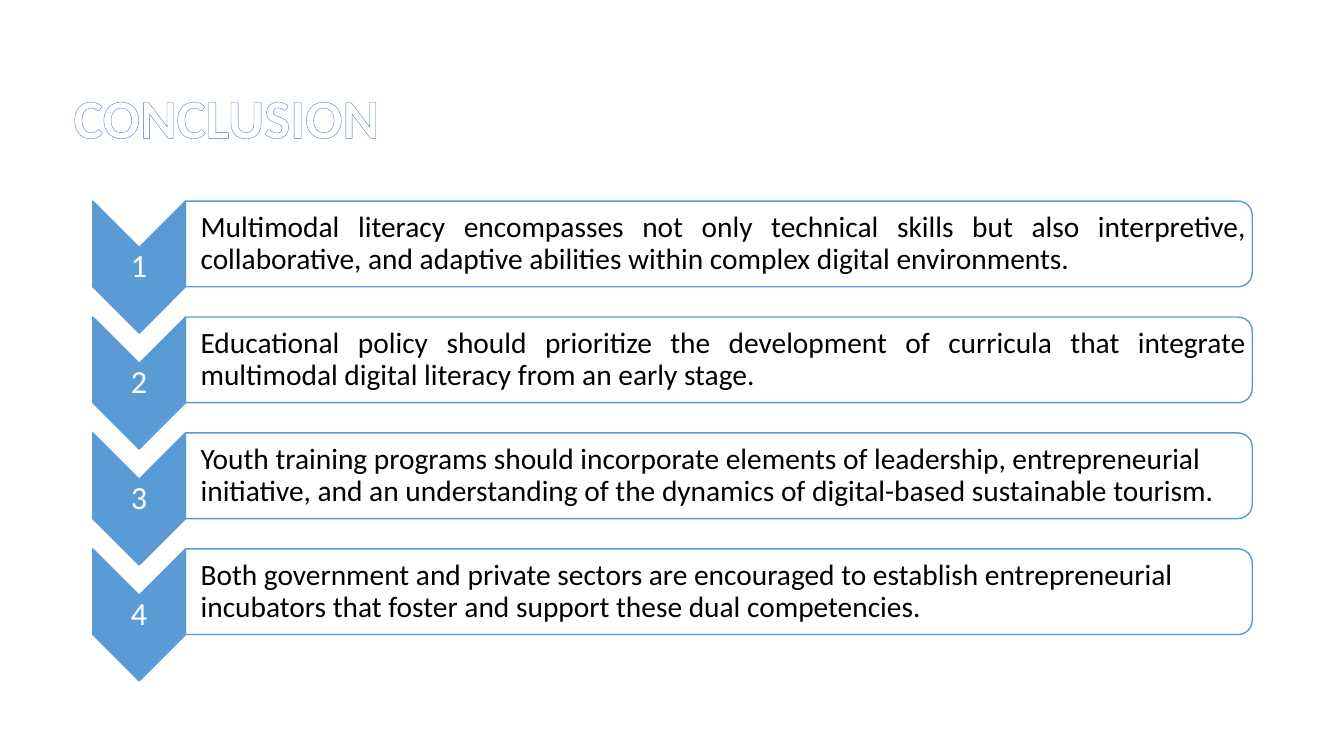
from lxml.etree import SubElement
from pptx import Presentation
from pptx.dml.color import RGBColor
from pptx.enum.shapes import MSO_SHAPE as Shape
from pptx.enum.text import MSO_ANCHOR as Anchor, MSO_AUTO_SIZE as AutoSize, PP_ALIGN as Align
from pptx.oxml import parse_xml
from pptx.oxml.ns import nsdecls, qn
from pptx.util import Inches, Pt

COLORS = {"white": "FFFFFF", "black": "000000", "accent": "5B9BD5", "outline": "4472C4"}
CONCLUSIONS = [
    ("Multimodal literacy encompasses not only technical skills but also interpretive, "
     "collaborative, and adaptive abilities within complex digital environments.", Align.JUSTIFY),
    ("Educational policy should prioritize the development of curricula that integrate "
     "multimodal digital literacy from an early stage.", Align.JUSTIFY),
    ("Youth training programs should incorporate elements of leadership, entrepreneurial "
     "initiative, and an understanding of the dynamics of digital-based sustainable tourism.", Align.LEFT),
    ("Both government and private sectors are encouraged to establish entrepreneurial "
     "incubators that foster and support these dual competencies.", Align.LEFT),
]
FIRST_ROW, ROW_STEP = 2.42, 1.15


def color(name):
    return RGBColor.from_string(COLORS[name])


def apply(target, formats):
    for name, value in formats.items():
        setattr(target, name, value)


class ConclusionSlide:
    """Holds the text style and the page, and draws each kind of element."""

    def __init__(self, deck, font="Calibri"):
        self.font = font
        self.page = deck.slides.add_slide(deck.slide_layouts[5])

    def add_text(self, box, text, size, hue, align, insets, bold=False):
        frame = box.text_frame
        sides = ("margin_left", "margin_top", "margin_right", "margin_bottom")
        apply(frame, dict(zip(sides, map(Inches, insets))))
        apply(frame, {"word_wrap": True, "auto_size": AutoSize.NONE,
                      "vertical_anchor": Anchor.MIDDLE})
        para = frame.paragraphs[0]
        apply(para, {"alignment": align, "line_spacing": 0.9})
        span = para.add_run()
        span.text = text
        apply(span.font, {"name": self.font, "size": Pt(size), "bold": bold})
        span.font.color.rgb = color(hue)
        return span

    def title(self, text, left, top, width, height):
        box = self.page.shapes.title
        apply(box, {"left": Inches(left), "top": Inches(top),
                    "width": Inches(width), "height": Inches(height)})
        span = self.add_text(box, text, 39.6, "white", Align.LEFT, (0.1, 0.05, 0.1, 0.05), True)
        outline = parse_xml(
            f'<a:ln {nsdecls("a")} w="{Pt(0.8)}"><a:solidFill>'
            f'<a:srgbClr val="{COLORS["outline"]}"/></a:solidFill></a:ln>')
        span._r.get_or_add_rPr().insert(0, outline)

    def turned_shape(self, kind, center_x, center_y, width, height, fill, opacity=100):
        shape = self.page.shapes.add_shape(
            kind, Inches(center_x - width / 2), Inches(center_y - height / 2),
            Inches(width), Inches(height))
        shape.rotation = 90
        shape.shadow.inherit = False
        shape.fill.solid()
        shape.fill.fore_color.rgb = color(fill)
        shape.line.color.rgb = color("accent")
        shape.line.width = Pt(1)
        if opacity < 100:
            hue = shape._element.spPr.find(qn("a:solidFill")).find(qn("a:srgbClr"))
            SubElement(hue, qn("a:alpha")).set("val", str(opacity * 1000))

    def label(self, text, left, center_y, width, height, size, hue, align, insets):
        box = self.page.shapes.add_textbox(
            Inches(left), Inches(center_y - height / 2), Inches(width), Inches(height))
        self.add_text(box, text, size, hue, align, insets)

    def row(self, number, text, align, middle):
        self.turned_shape(Shape.CHEVRON, 1.38, middle + 0.23, 1.31, 0.92, "accent")
        self.label(str(number), 0.92, middle + 0.23, 0.92, 0.39, 23, "white",
                   Align.CENTER, (0.02,) * 4)
        self.turned_shape(Shape.ROUND_2_SAME_RECTANGLE, 7.13, middle, 0.85, 10.58, "white", 90)
        self.label(text, 1.83, middle, 10.54, 0.77, 21, "black", align,
                   (0.16, 0.01, 0.01, 0.01))


def main():
    deck = Presentation()
    apply(deck, {"slide_width": Inches(13.33), "slide_height": Inches(7.5)})
    slide = ConclusionSlide(deck)
    slide.title("CONCLUSION", 0.63, 0.88, 11.5, 0.63)
    for index, (text, align) in enumerate(CONCLUSIONS):
        slide.row(index + 1, text, align, FIRST_ROW + index * ROW_STEP)
    deck.save("out.pptx")


if __name__ == "__main__":
    main()
